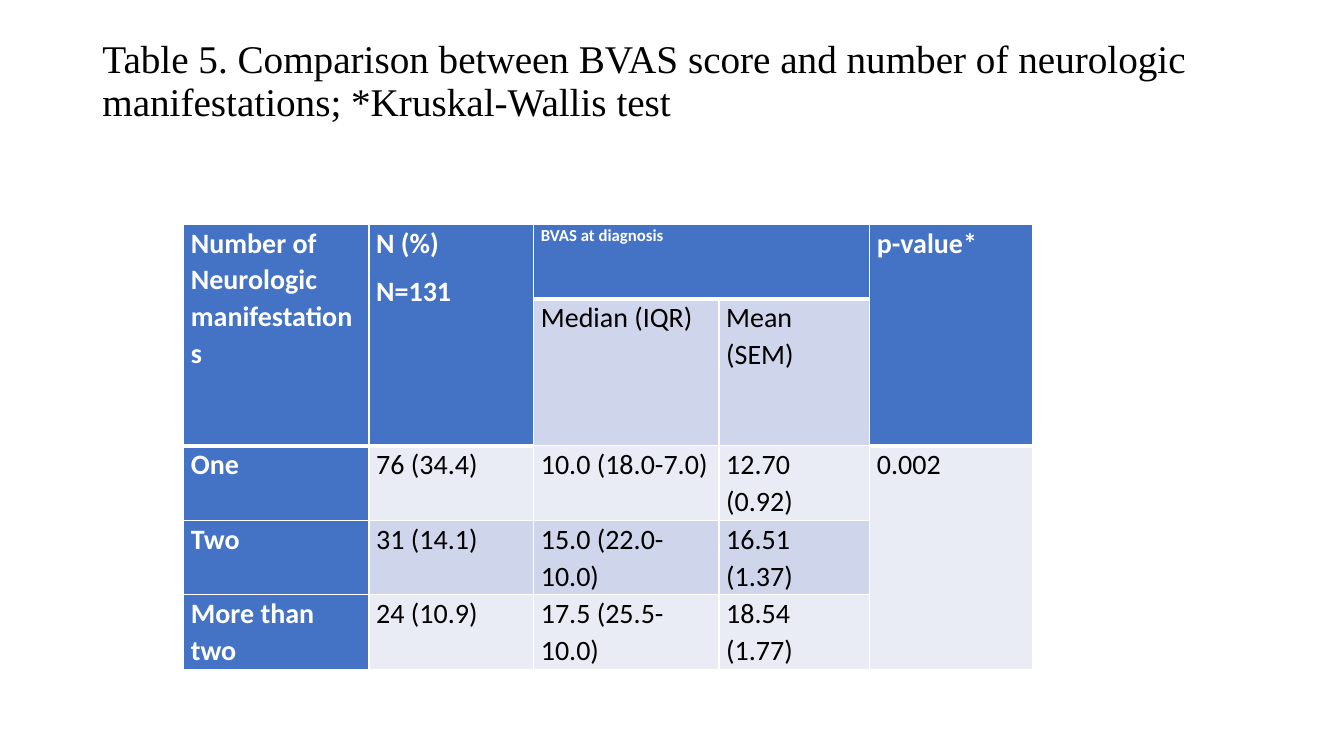
from lxml import etree
from pptx import Presentation
from pptx.dml.color import RGBColor
from pptx.enum.text import MSO_ANCHOR
from pptx.oxml.ns import qn
from pptx.util import Cm, Pt

TOP = MSO_ANCHOR.TOP
BLUE, LIGHT, PALE = "4472C4", "CFD5EA", "E9EBF5"
WHITE, BLACK = "FFFFFF", "000000"
TITLE = ("Table 5. Comparison between BVAS score and number of neurologic "
         "manifestations; *Kruskal-Wallis test")
COL_WIDTHS = [4.67, 4.15, 4.67, 3.8, 4.1]
ROW_HEIGHTS = [1.88, 3.7, 1.88, 1.88, 1.88]
ROWS = [
    ["Number of Neurologic manifestations", "N (%)\nN=131",
     "BVAS at diagnosis", "", "p-value*"],
    ["", "", "Median (IQR)", "Mean (SEM)", ""],
    ["One", "76 (34.4)", "10.0 (18.0-7.0)", "12.70 (0.92)", "0.002"],
    ["Two", "31 (14.1)", "15.0 (22.0-10.0)", "16.51 (1.37)", ""],
    ["More than two", "24 (10.9)", "17.5 (25.5-10.0)", "18.54 (1.77)", ""],
]
MERGES = [((0, 0), (1, 0)), ((0, 1), (1, 1)), ((0, 2), (0, 3)),
          ((0, 4), (1, 4)), ((2, 4), (4, 4))]


def rgb(color):
    return RGBColor.from_string(color)


def add_run(p, text, size, font, color, bold=False):
    r = p.add_run()
    r.text = text
    r.font.size, r.font.name, r.font.bold = Pt(size), font, bold
    r.font.color.rgb = rgb(color)


def add_title(s, text):
    sp = s.shapes.add_textbox(Cm(2.33), Cm(1.01), Cm(29.21), Cm(3.68))
    tf = sp.text_frame
    tf.word_wrap = True
    tf.vertical_anchor = TOP
    tf.margin_top = 0
    p = tf.paragraphs[0]
    p.line_spacing = 0.9
    add_run(p, text, 28, "Times New Roman", BLACK)


def set_borders(cell, bottom):
    """Draw white 1 pt borders, with the bottom one as wide as given."""
    tc_pr = cell._tc.get_or_add_tcPr()
    for i, side in enumerate(["lnL", "lnR", "lnT", "lnB"]):
        ln = etree.Element(qn(f"a:{side}"), w=str(Pt(bottom if side == "lnB" else 1)))
        fill = etree.SubElement(ln, qn("a:solidFill"))
        etree.SubElement(fill, qn("a:srgbClr"), val=WHITE)
        tc_pr.insert(i, ln)


def fill_cell(cell, text, fill, size, header, bottom):
    cell.fill.solid()
    cell.fill.fore_color.rgb = rgb(fill)
    set_borders(cell, bottom)
    cell.margin_left = cell.margin_right = Cm(0.18)
    cell.margin_top = cell.margin_bottom = 0
    tf = cell.text_frame
    for i, line in enumerate(text.split("\n") if text else []):
        p = tf.add_paragraph() if i else tf.paragraphs[0]
        p.line_spacing, p.space_after = 1.07, Pt(8)
        add_run(p, line, size, "Calibri", WHITE if header else BLACK, header)


def add_score_table(s):
    frame = s.shapes.add_table(len(ROWS), len(COL_WIDTHS), Cm(4.63), Cm(5.65),
                               Cm(sum(COL_WIDTHS)), Cm(sum(ROW_HEIGHTS)))
    table = frame.table
    for col, width in zip(table.columns, COL_WIDTHS):
        col.width = Cm(width)
    for row, height in zip(table.rows, ROW_HEIGHTS):
        row.height = Cm(height)
    for first, last in MERGES:
        table.cell(*first).merge(table.cell(*last))
    for r, row in enumerate(ROWS):
        for c, text in enumerate(row):
            header = r == 0 or c == 0 or (r == 1 and c in (1, 4))
            fill = BLUE if header else LIGHT if r % 2 else PALE
            size = 12 if (r, c) == (0, 2) else 20
            bottom = 3 if header and r < 2 else 1
            fill_cell(table.cell(r, c), text, fill, size, header, bottom)


def main():
    prs = Presentation()
    prs.slide_width, prs.slide_height = Cm(33.87), Cm(19.05)
    s = prs.slides.add_slide(prs.slide_layouts[6])
    add_title(s, TITLE)
    add_score_table(s)
    prs.save("out.pptx")


if __name__ == "__main__":
    main()
